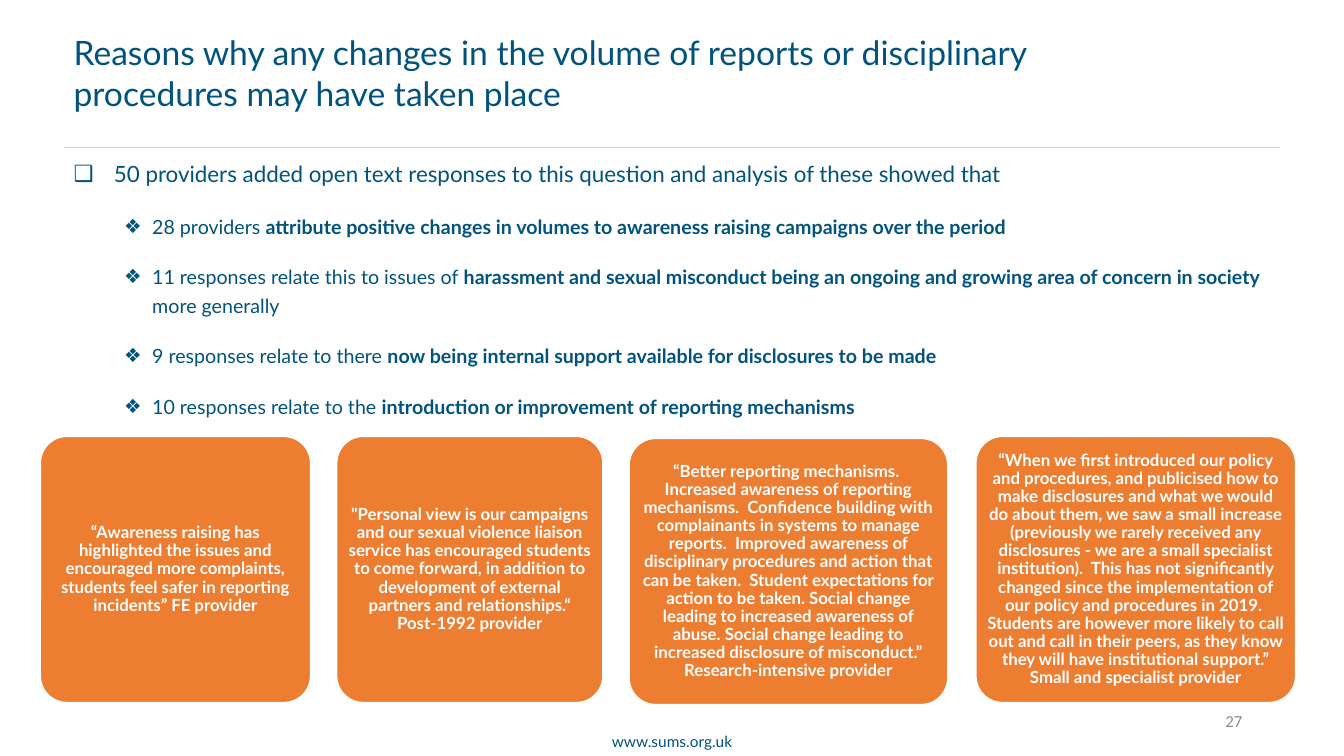
from lxml import etree
from pptx import Presentation
from pptx.dml.color import RGBColor
from pptx.enum import shapes, text
from pptx.oxml import ns
from pptx.util import Inches, Pt

COLOURS = {"blue": "00537F", "orange": "ED7D31", "white": "FFFFFF",
           "rule": "D0CECE", "grey": "8C8C8C"}
TITLE = ("Reasons why any changes in the volume of reports or disciplinary "
         "procedures may have taken place")
SUMMARY = ("50 providers added open text responses to this question and "
           "analysis of these showed that")
# Plain start, bold middle, plain end
REASONS = [
    ("28 providers ", "attribute positive changes in volumes to awareness "
     "raising campaigns over the period", ""),
    ("11 responses relate this to issues of ", "harassment and sexual misconduct "
     "being an ongoing and growing area of concern in society", " more generally"),
    ("9 responses relate to there ", "now being internal support available for "
     "disclosures to be made", ""),
    ("10 responses relate to the ", "introduction or improvement of reporting "
     "mechanisms", ""),
]
# Left, top, width, words
QUOTES = [
    (0.4, 4.33, 2.68, "“Awareness raising has highlighted the issues and encouraged "
     "more complaints, students feel safer in reporting incidents” FE provider"),
    (3.34, 4.33, 2.64, "\"Personal view is our campaigns and our sexual violence "
     "liaison service has encouraged students to come forward, in addition to "
     "development of external partners and relationships.“ Post-1992 provider"),
    (6.24, 4.35, 3.16, "“Better reporting mechanisms.  Increased awareness of "
     "reporting mechanisms.  Confidence building with complainants in systems to "
     "manage reports.  Improved awareness of disciplinary procedures and action that "
     "can be taken.  Student expectations for action to be taken. Social change "
     "leading to increased awareness of abuse. Social change leading to increased "
     "disclosure of misconduct.” Research-intensive provider"),
    (9.68, 4.33, 3.17, "“When we first introduced our policy and procedures, and "
     "publicised how to make disclosures and what we would do about them, we saw a "
     "small increase (previously we rarely received any disclosures - we are a small "
     "specialist institution).  This has not significantly changed since the "
     "implementation of our policy and procedures in 2019.  Students are however more "
     "likely to call out and call in their peers, as they know they will have "
     "institutional support.” Small and specialist provider"),
]


def colour(name):
    return RGBColor.from_string(COLOURS[name])


def place(shape, left, top, width, height):
    shape.left, shape.top = Inches(left), Inches(top)
    shape.width, shape.height = Inches(width), Inches(height)


def style(para, size, shade="blue", face="Lato", bold=None):
    para.font.name, para.font.size = face, Pt(size)
    para.font.color.rgb = colour(shade)
    para.font.bold = bold


def prepare_frame(shape, anchor):
    frame = shape.text_frame
    frame.word_wrap = True
    frame.auto_size = text.MSO_AUTO_SIZE.NONE
    frame.vertical_anchor = anchor
    return frame


def add_bullet(para, symbol, indent, hanging):
    props = para._p.get_or_add_pPr()
    props.set("marL", str(Inches(indent)))
    props.set("indent", str(-Inches(hanging)))
    etree.SubElement(props, ns.qn("a:buChar")).set("char", symbol)


def fill_title(page):
    title = page.shapes.title
    place(title, 0.63, 0.27, 10.22, 0.81)
    para = prepare_frame(title, text.MSO_ANCHOR.TOP).paragraphs[0]
    para.text = TITLE
    para.alignment = text.PP_ALIGN.LEFT
    para.space_before = Pt(0)
    style(para, 24)


def fill_list(page):
    body = page.placeholders[1]
    place(body, 0.63, 1.49, 12.22, 5.2)
    frame = prepare_frame(body, text.MSO_ANCHOR.TOP)
    summary = frame.paragraphs[0]
    summary.text = SUMMARY
    add_bullet(summary, "❑", 0.4, 0.4)
    style(summary, 16)
    for parts in REASONS:
        para = frame.add_paragraph()
        para.level = 1
        add_bullet(para, "❖", 0.78, 0.28)
        style(para, 14)
        for index, words in enumerate(parts):
            if words:
                span = para.add_run()
                span.text = words
                span.font.bold = index == 1
    for para in frame.paragraphs:
        para.line_spacing = 1.2
        para.space_before = Pt(0 if para is summary else 10)
        para.space_after = Pt(6)
    frame.paragraphs[0].space_before = Pt(0)


def add_rule(page):
    rule = page.shapes.add_connector(shapes.MSO_CONNECTOR.STRAIGHT, Inches(0.63),
                                     Inches(1.46), Inches(12.7), Inches(1.46))
    rule.line.color.rgb = colour("rule")
    rule.line.width = Pt(0.5)
    etree.SubElement(rule._element.spPr, ns.qn("a:effectLst"))


def add_label(page, words, bounds, align, size, shade, face):
    box = page.shapes.add_textbox(*(Inches(value) for value in bounds))
    para = prepare_frame(box, text.MSO_ANCHOR.MIDDLE).paragraphs[0]
    para.text = words
    para.alignment = align
    style(para, size, shade, face)


def add_quote(page, left, top, width, words):
    card = page.shapes.add_shape(shapes.MSO_SHAPE.ROUNDED_RECTANGLE, Inches(left),
                                 Inches(top), Inches(width), Inches(2.64))
    card.adjustments[0] = 0.1
    card.shadow.inherit = False
    card.fill.solid()
    card.fill.fore_color.rgb = colour("orange")
    card.line.color.rgb = colour("white")
    card.line.width = Pt(1)
    frame = prepare_frame(card, text.MSO_ANCHOR.MIDDLE)
    frame.margin_left = frame.margin_right = Inches(0.03)
    frame.margin_top = frame.margin_bottom = Inches(0.02)
    para = frame.paragraphs[0]
    para.text = words
    para.alignment = text.PP_ALIGN.CENTER
    para.line_spacing = 0.9
    style(para, 12, "white", bold=True)


def main():
    deck = Presentation()
    deck.slide_width, deck.slide_height = Inches(13.33), Inches(7.5)
    page = deck.slides.add_slide(deck.slide_layouts[1])
    add_rule(page)
    add_label(page, "www.sums.org.uk", (5.94, 7.21, 1.45, 0.29),
              text.PP_ALIGN.CENTER, 11, "blue", "Lato")
    add_label(page, "27", (9.42, 6.95, 3, 0.4),
              text.PP_ALIGN.RIGHT, 12, "grey", "Calibri")
    fill_title(page)
    fill_list(page)
    for quote in QUOTES:
        add_quote(page, *quote)
    deck.save("out.pptx")


if __name__ == "__main__":
    main()
